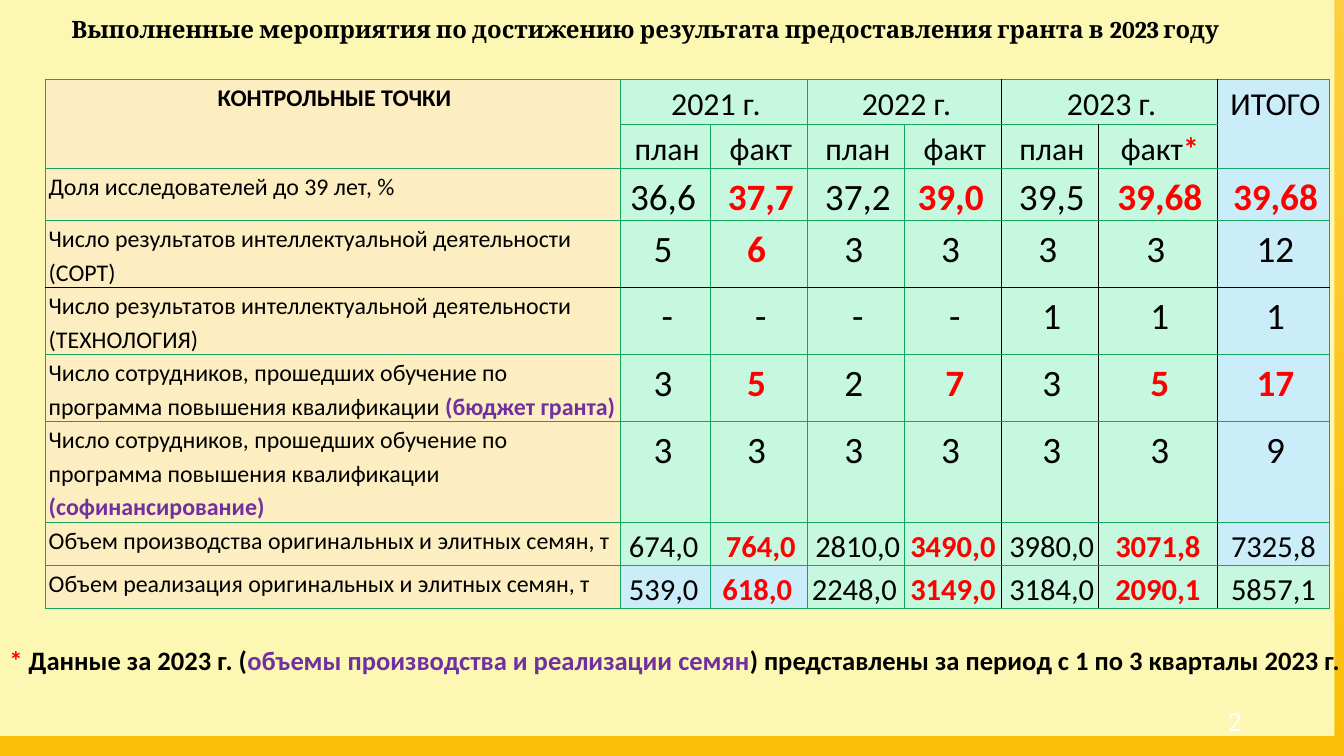
"""Slide: grant result activities completed in 2023, plan against fact."""
from lxml.etree import SubElement
from pptx import Presentation
from pptx.dml.color import RGBColor
from pptx.enum.shapes import MSO_SHAPE as Shape
from pptx.enum.text import MSO_ANCHOR as Anchor, PP_ALIGN as Align
from pptx.oxml.ns import qn
from pptx.util import Inches, Pt

COLORS = {
    "black": "000000", "red": "FF0000", "purple": "7030A0", "white": "FFFFFF",
    "panel": "FCF7B2", "gold_top": "FECF40", "gold_bottom": "FBBF09",
    "cream": "FCEEC1", "mint": "C6F8DF", "sky": "CBEDF9", "green": "15A55F",
}


def red(text):
    """Return the runs of a highlighted value."""
    return [(text, "red")]


TITLE = "Выполненные мероприятия по достижению результата предоставления гранта в 2023 году"
FOOTNOTE = [
    ("* ", "red"), ("Данные за 2023 г. (", "black"),
    ("объемы производства и реализации семян", "purple"),
    (") представлены за период с 1 по 3 кварталы 2023 г.", "black"),
]
PAGE_NUMBER = "2"
TRAINED = "Число сотрудников, прошедших обучение по программа повышения квалификации "
RESULTS = "Число результатов интеллектуальной деятельности"
ROWS = [
    (0.47, 24, ["КОНТРОЛЬНЫЕ ТОЧКИ", "2021 г.", "", "2022 г.", "", "2023 г.", "", "ИТОГО"]),
    (0.46, 24, ["", "план", "факт", "план", "факт", "план",
                [("факт", "black"), ("*", "red")], ""]),
    (0.55, 28, ["Доля исследователей до 39 лет, %", "36,6 ", red("37,7"), "37,2",
                red("39,0 "), "39,5", red("39,68"), red("39,68")]),
    (0.7, 28, [RESULTS + " (СОРТ)", "5 ", red("6 "), "3 ", "3 ", "3 ", "3 ", "12"]),
    (0.7, 28, [RESULTS + "\n(ТЕХНОЛОГИЯ)", "-", "-", "-", "-", "1", "1", "1"]),
    (0.7, 28, [[(TRAINED, "black"), ("(бюджет гранта)", "purple")],
               "3 ", red("5 "), "2 ", red("7"), "3", red("5"), red("17")]),
    (1.06, 28, [[(TRAINED, "black"), ("(софинансирование)", "purple")],
                "3 ", "3 ", "3 ", "3 ", "3", "3", "9"]),
    (0.45, 23, ["Объем производства оригинальных и элитных семян, т", "674,0 ", red("764,0"),
                "2810,0", red("3490,0"), "3980,0", red("3071,8"), "7325,8"]),
    (0.45, 23, ["Объем реализация оригинальных и элитных семян, т", "539,0 ", red("618,0 "),
                "2248,0 ", red("3149,0"), "3184,0", red("2090,1"), "5857,1"]),
]
COLUMN_WIDTHS = [6.02, 0.94, 1.02, 1.01, 1.02, 1.01, 1.25, 1.17]
MERGES = [((0, 0), (1, 0)), ((0, 1), (0, 2)), ((0, 3), (0, 4)), ((0, 5), (0, 6)), ((0, 7), (1, 7))]
LABEL_SIZE = 18
TOTAL_COLUMN = 7
FIRST_SEED_ROW = 7
TIGHT_COLUMNS = (4, 6)
BLACK_VERTICALS = (5, 6, 7)
BLACK_HORIZONTALS = (4,)
FILL_EXCEPTIONS = {(8, 1): "sky", (8, 2): "sky", (8, 7): "mint"}


def rgb(name):
    return RGBColor.from_string(COLORS[name])


def write(frame, content, size, font="Calibri", align=Align.LEFT, spacing=None, bold=None):
    runs = [(content, "black")] if isinstance(content, str) else content
    paragraph = frame.paragraphs[0]
    for text, color in runs:
        for index, line in enumerate(text.split("\n")):
            if index:
                paragraph = frame.add_paragraph()
            if line:
                run = paragraph.add_run()
                run.text = line
                run.font.color.rgb = rgb(color)
                run.font.bold = color != "black" if bold is None else bold
    for paragraph in frame.paragraphs:
        paragraph.alignment = align
        paragraph.line_spacing = spacing
        paragraph.font.size = Pt(size)
        paragraph.font.name = font


def add_text(slide, box, content, size, wrap=True, anchor=Anchor.TOP, **style):
    frame = slide.shapes.add_textbox(*map(Inches, box)).text_frame
    frame.word_wrap = wrap
    frame.vertical_anchor = anchor
    write(frame, content, size, **style)


def set_borders(cell, row, column):
    right = column + (cell.span_width if cell.is_merge_origin else 1)
    bottom = row + (cell.span_height if cell.is_merge_origin else 1)
    sides = [("L", column in BLACK_VERTICALS), ("R", right in BLACK_VERTICALS),
             ("T", row in BLACK_HORIZONTALS), ("B", bottom in BLACK_HORIZONTALS)]
    properties = cell._tc.get_or_add_tcPr()
    for side, is_black in sides:
        line = SubElement(properties, qn("a:ln" + side), w=str(Pt(1 if is_black else 0.5)))
        fill = SubElement(line, qn("a:solidFill"))
        SubElement(fill, qn("a:srgbClr"), val=COLORS["black" if is_black else "green"])


def style_cell(cell, row, column, content, size):
    is_label, is_total = column == 0, column == TOTAL_COLUMN
    is_seed = row >= FIRST_SEED_ROW
    seed_total = is_seed and is_total
    set_borders(cell, row, column)
    default_fill = "cream" if is_label else "sky" if is_total else "mint"
    cell.fill.solid()
    cell.fill.fore_color.rgb = rgb(FILL_EXCEPTIONS.get((row, column), default_fill))
    cell.margin_left = Inches(
        0.01 if seed_total else 0 if is_seed and column in TIGHT_COLUMNS else 0.04)
    cell.margin_right = cell.margin_top = Inches(0.01 if seed_total else 0)
    cell.margin_bottom = 0
    cell.vertical_anchor = Anchor.BOTTOM if seed_total else Anchor.TOP
    write(cell.text_frame, content, LABEL_SIZE if is_label else size,
          align=Align.LEFT if is_label and row else Align.CENTER,
          spacing=None if seed_total else 1.15,
          bold=True if is_label and row == 0 else None)


def add_control_points(slide):
    table = slide.shapes.add_table(
        len(ROWS), len(COLUMN_WIDTHS), Inches(0.47), Inches(0.83),
        Inches(sum(COLUMN_WIDTHS)), Inches(sum(height for height, _, _ in ROWS))).table
    table.first_row = table.horz_banding = False
    for column, width in zip(table.columns, COLUMN_WIDTHS):
        column.width = Inches(width)
    for first, last in MERGES:
        table.cell(*first).merge(table.cell(*last))
    for row, (height, size, contents) in enumerate(ROWS):
        table.rows[row].height = Inches(height)
        for column, content in enumerate(contents):
            style_cell(table.cell(row, column), row, column, content, size)


def main():
    deck = Presentation()
    deck.slide_width, deck.slide_height = Inches(14.06), Inches(7.91)
    slide = deck.slides.add_slide(deck.slide_layouts[6])
    backdrop = slide.background.fill
    backdrop.gradient()
    backdrop.gradient_angle = 270
    for stop, color in zip(backdrop.gradient_stops, ("gold_top", "gold_bottom")):
        stop.color.rgb = rgb(color)
    panel = slide.shapes.add_shape(Shape.RECTANGLE, 0, 0, Inches(13.96), Inches(7.7))
    panel.shadow.inherit = False
    panel.fill.solid()
    panel.fill.fore_color.rgb = rgb("panel")
    panel.line.fill.background()
    add_text(slide, (9.93, 7.33, 3.16, 0.42), [(PAGE_NUMBER, "white")], 21,
             anchor=Anchor.MIDDLE, align=Align.RIGHT, bold=False)
    add_control_points(slide)
    add_text(slide, (0.41, 0.14, 12.69, 0.37), TITLE, 18, wrap=False, font="Cambria",
             align=Align.CENTER, spacing=0.9, bold=True)
    add_text(slide, (0, 6.69, 15.08, 0.44), FOOTNOTE, 20, bold=True)
    deck.save("out.pptx")


if __name__ == "__main__":
    main()
